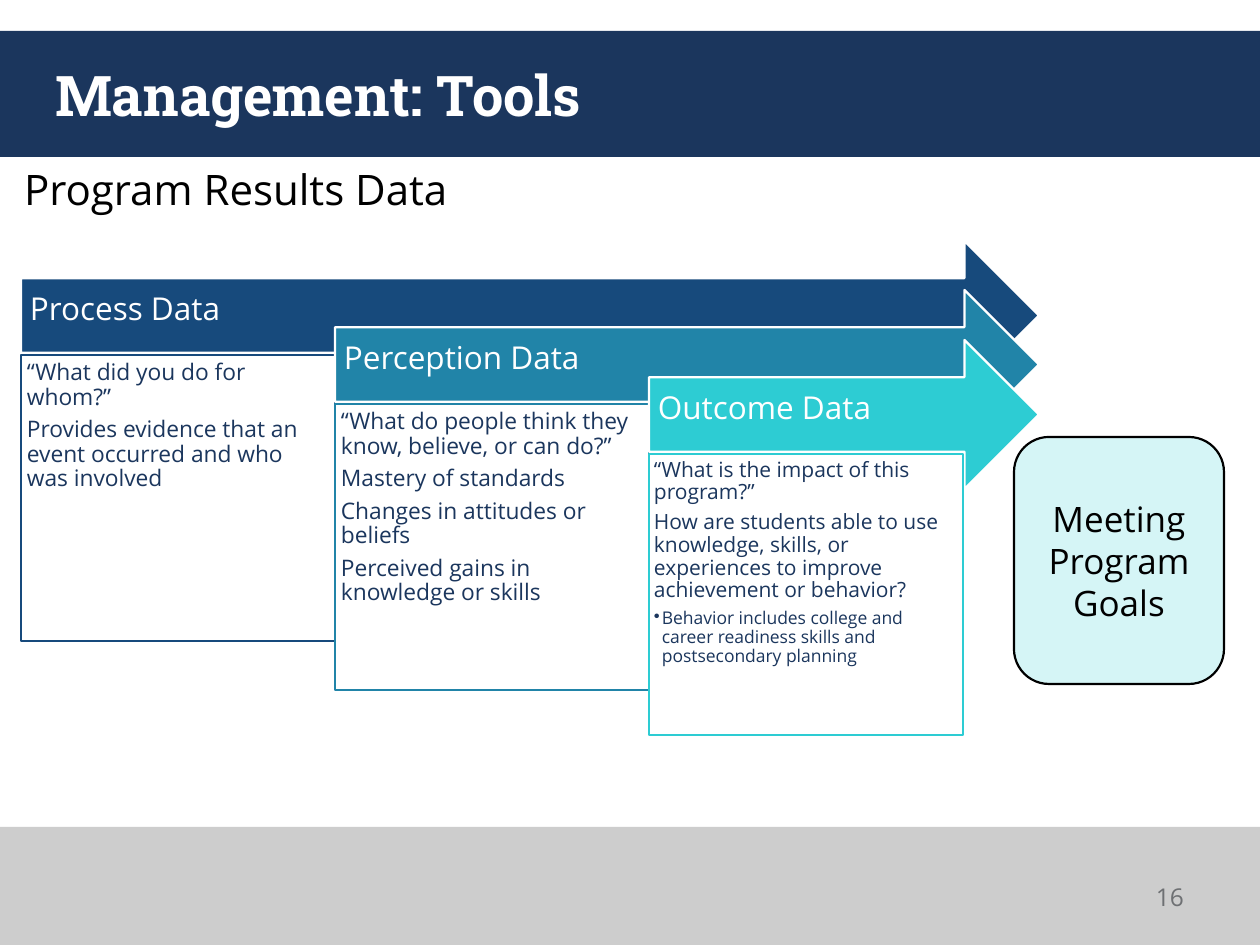
"""Build the Management: Tools slide with three staggered data arrows."""
from dataclasses import dataclass
from lxml import etree
from pptx import Presentation
from pptx import util as u
from pptx.dml.color import RGBColor
from pptx.enum import shapes as s, text as t
from pptx.oxml import ns

STEPS = [
    {"name": "Process Data", "fill": "174A7C", "size": 13, "deep": 286, "pad": 6,
     "lines": ["“What did you do for whom?”",
               "Provides evidence that an event occurred and who was involved"],
     "points": []},
    {"name": "Perception Data", "fill": "2184A8", "size": 13, "deep": 286, "pad": 6,
     "lines": ["“What do people think they know, believe, or can do?”",
               "Mastery of standards",
               "Changes in attitudes or beliefs",
               "Perceived gains in knowledge or skills"],
     "points": []},
    {"name": "Outcome Data", "fill": "2DCCD3", "size": 12, "deep": 281, "pad": 5,
     "lines": ["“What is the impact of this program?”",
               "How are students able to use knowledge, skills, or experiences "
               "to improve achievement or behavior?"],
     "points": ["Behavior includes college and career readiness skills and "
                "postsecondary planning"]},
]
BANDS = [((0, 31, 1260, 126), "1B365D"), ((0, 827, 1260, 118), "CDCDCD")]


@dataclass
class Theme:
    """Colours, fonts and type sizes."""
    head: str = "Roboto Slab"
    body: str = "Open Sans"
    white: str = "FFFFFF"
    black: str = "000000"
    navy: str = "1B365D"
    gray: str = "6E7073"
    pale: str = "D5F5F6"
    title: int = 32
    sub: int = 24
    goal: int = 20
    label: int = 18
    page: int = 14
    point: int = 10
    line: float = 1.25


LOOK = Theme()
MID = t.MSO_ANCHOR.MIDDLE
SCALE = 914400 / 126


def px(n):
    """Turn px into EMU."""
    return u.Emu(round(n * SCALE))


def rgb(code):
    """Turn a hex code into a colour."""
    return RGBColor.from_string(code)


def shape(slide, kind, at, fill, line=None):
    """Add a filled preset shape."""
    item = slide.shapes.add_shape(kind, *map(px, at))
    item.shadow.inherit = False
    item.fill.solid()
    item.fill.fore_color.rgb = rgb(fill)
    if line:
        item.line.color.rgb = rgb(line)
        item.line.width = u.Pt(LOOK.line)
    else:
        item.line.fill.background()
    return item


def setup(item, pads=(13, 6, 13, 6), anchor=t.MSO_ANCHOR.TOP):
    """Set wrapping, insets and anchor of a text frame."""
    frame = item.text_frame
    frame.word_wrap = True
    frame.vertical_anchor = anchor
    (frame.margin_left, frame.margin_top,
     frame.margin_right, frame.margin_bottom) = map(px, pads)
    return frame


def write(para, words, size, color, align=t.PP_ALIGN.LEFT, font=LOOK.body, bold=False):
    """Add one formatted run to a paragraph."""
    para.alignment = align
    run = para.add_run()
    run.text = words
    run.font.name, run.font.size, run.font.bold = font, u.Pt(size), bold
    run.font.color.rgb = rgb(color)


def box(slide, at, words, size, color, align=t.PP_ALIGN.LEFT, **opts):
    """Add a text box of one paragraph."""
    item = slide.shapes.add_textbox(*map(px, at))
    write(setup(item, **opts).paragraphs[0], words, size, color, align)


def bullet(para):
    """Give a paragraph a hanging bullet."""
    props = para._p.get_or_add_pPr()
    props.set("marL", str(px(8)))
    props.set("indent", str(-px(8)))
    etree.SubElement(props, ns.qn("a:buChar"), char="•")


def panel(slide, at, step):
    """Add the outlined box of notes under an arrow."""
    item = shape(slide, s.MSO_SHAPE.RECTANGLE, at, LOOK.white, step["fill"])
    frame = setup(item, (step["pad"],) * 4)
    rows = [(words, step["size"], False) for words in step["lines"]]
    rows += [(words, LOOK.point, True) for words in step["points"]]
    for i, (words, size, dot) in enumerate(rows):
        para = frame.add_paragraph() if i else frame.paragraphs[0]
        para.line_spacing = 0.9
        para.space_after = u.Pt(round(size * (0.15 if dot else 0.35), 1))
        if dot:
            bullet(para)
        write(para, words, size, LOOK.navy)


def flow(slide):
    """Stagger the arrows, their labels and their panels."""
    wide, right = 314, 1039
    for i, step in enumerate(STEPS):
        left, top = 21 + i * wide, 241 + i * 99 // 2
        shape(slide, s.MSO_SHAPE.RIGHT_ARROW, (left, top, right - left, 149),
              step["fill"], LOOK.white)
        box(slide, (left, top + 37, right - 37 - left, 75), step["name"],
            LOOK.label, LOOK.white, pads=(9, 9, 35, 24), anchor=MID)
        panel(slide, (left, top + 114, wide, step["deep"]), step)


def main():
    """Compose and save the slide."""
    deck = Presentation()
    deck.slide_width, deck.slide_height = px(1260), px(945)
    slide = deck.slides.add_slide(deck.slide_layouts[5])
    for at, fill in BANDS:
        shape(slide, s.MSO_SHAPE.RECTANGLE, at, fill)

    title = slide.shapes.title
    slide.shapes._spTree.append(title._element)
    title.left, title.top, title.width, title.height = map(px, (42, 31, 1144, 126))
    write(setup(title, anchor=MID).paragraphs[0], "Management: Tools",
          LOOK.title, LOOK.white, font=LOOK.head, bold=True)

    box(slide, (0, 157, 1239, 735), "Program Results Data",
        LOOK.sub, LOOK.black, pads=(24, 6, 13, 6))
    box(slide, (1134, 876, 63, 50), "16", LOOK.page, LOOK.gray, t.PP_ALIGN.RIGHT)
    flow(slide)

    goal = shape(slide, s.MSO_SHAPE.ROUNDED_RECTANGLE, (1014, 437, 210, 247),
                 LOOK.pale, LOOK.black)
    write(setup(goal, anchor=MID).paragraphs[0], "Meeting Program Goals",
          LOOK.goal, LOOK.black, t.PP_ALIGN.CENTER)
    deck.save("out.pptx")


if __name__ == "__main__":
    main()
